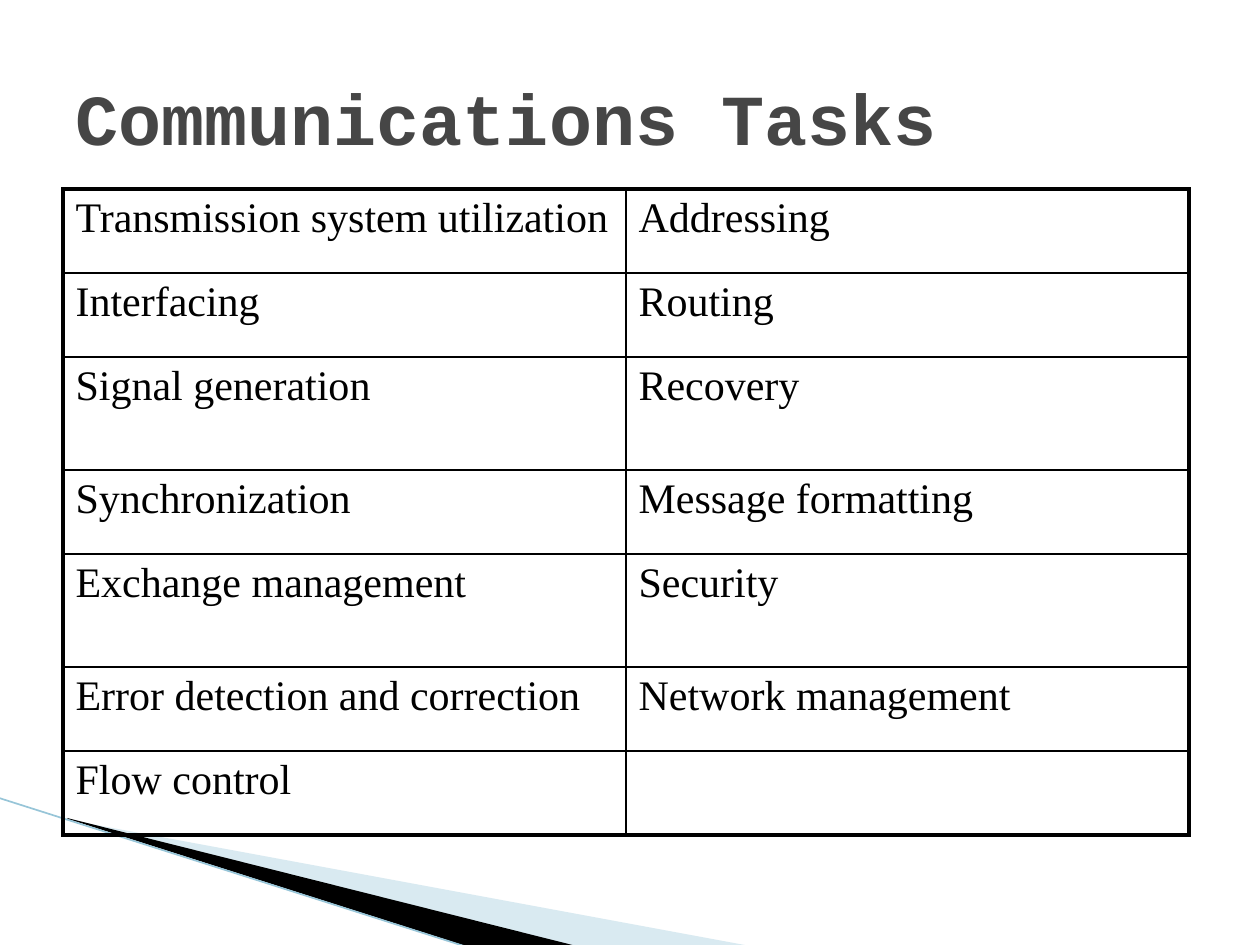
"""Build the Communications Tasks slide: a two-column table over corner wedges."""
from lxml.etree import SubElement
from pptx import Presentation
from pptx.dml.color import RGBColor
from pptx.enum.shapes import MSO_CONNECTOR as Connector
from pptx.enum.text import MSO_ANCHOR as Anchor, MSO_AUTO_SIZE as AutoSize, PP_ALIGN as Align
from pptx.oxml.ns import qn
from pptx.util import Pt

PX = 914400 / 126
BLACK = RGBColor(0x00, 0x00, 0x00)
GRAY = RGBColor(0x46, 0x46, 0x46)
PALE_BLUE = RGBColor(0xA0, 0xCB, 0xDC)
EDGE_BLUE = RGBColor(0x97, 0xC5, 0xD8)
THICK, THIN = 2.25, 1

TASKS = [
    ("Transmission system utilization", "Addressing"),
    ("Interfacing", "Routing"),
    ("Signal generation", "Recovery"),
    ("Synchronization", "Message formatting"),
    ("Exchange management", "Security"),
    ("Error detection and correction", "Network management"),
    ("Flow control", ""),
]
ROW_HEIGHTS = [84, 84, 113, 84, 113, 84, 84]
COLUMN_WIDTH = 563


def px(length):
    return round(length * PX)


def write_text(frame, text, font="Times New Roman", size=24, color=BLACK, bold=False):
    paragraph = frame.paragraphs[0]
    paragraph.alignment = Align.LEFT
    run = paragraph.add_run()
    run.text = text
    run.font.name = font
    run.font.size = Pt(size)
    run.font.bold = bold
    run.font.color.rgb = color


def add_title(slide, text):
    title = slide.shapes.title
    title.left, title.top, title.width, title.height = map(px, (63, 38, 1134, 157))
    frame = title.text_frame
    frame.vertical_anchor = Anchor.MIDDLE
    frame.auto_size = AutoSize.NONE
    write_text(frame, text, font="Courier New", size=41, color=GRAY, bold=True)


def add_wedge(slide, points, color, opacity=100):
    start, *rest = points
    builder = slide.shapes.build_freeform(*start, scale=PX)
    builder.add_line_segments(rest, close=True)
    wedge = builder.convert_to_shape()
    wedge.shadow.inherit = False
    wedge.line.fill.background()
    wedge.fill.solid()
    wedge.fill.fore_color.rgb = color
    if opacity < 100:
        tint = wedge.fill._xPr.find(f"{qn('a:solidFill')}/{qn('a:srgbClr')}")
        SubElement(tint, qn("a:alpha"), val=str(opacity * 1000))


def add_edge(slide, start, end):
    edge = slide.shapes.add_connector(Connector.STRAIGHT, *map(px, start + end))
    edge.line.color.rgb = EDGE_BLUE
    edge.line.width = Pt(0.95)
    SubElement(edge._element.spPr, qn("a:effectLst"))


def set_borders(cell, **widths):
    properties = cell._tc.get_or_add_tcPr()
    for side in "LRTB":
        border = SubElement(properties, qn(f"a:ln{side}"), w=str(Pt(widths[side])))
        fill = SubElement(border, qn("a:solidFill"))
        SubElement(fill, qn("a:srgbClr"), val=str(BLACK))


def add_task_table(slide, left, top):
    last_row, last_column = len(TASKS) - 1, len(TASKS[0]) - 1
    size = COLUMN_WIDTH * len(TASKS[0]), sum(ROW_HEIGHTS)
    table = slide.shapes.add_table(
        len(TASKS), len(TASKS[0]), *map(px, (left, top, *size))).table
    table.first_row = table.horz_banding = False
    for column in table.columns:
        column.width = px(COLUMN_WIDTH)
    for r, (tasks, height) in enumerate(zip(TASKS, ROW_HEIGHTS)):
        table.rows[r].height = px(height)
        for c, task in enumerate(tasks):
            cell = table.cell(r, c)
            set_borders(
                cell,
                L=THICK if c == 0 else THIN,
                R=THICK if c == last_column else THIN,
                T=THICK if r == 0 else THIN,
                B=THICK if r == last_row else THIN,
            )
            cell.fill.background()
            if task:
                write_text(cell.text_frame, task)


def main():
    deck = Presentation()
    deck.slide_width, deck.slide_height = px(1260), px(945)
    slide = deck.slides.add_slide(deck.slide_layouts[5])
    add_wedge(slide, [(69, 820), (750, 946), (575, 946), (69, 819)], PALE_BLUE, opacity=40)
    add_wedge(slide, [(67, 818), (576, 946), (469, 947), (68, 819)], BLACK)
    add_edge(slide, (-1, 798), (467, 947))
    add_title(slide, "Communications Tasks")
    add_task_table(slide, 63, 189)
    deck.save("out.pptx")


if __name__ == "__main__":
    main()
